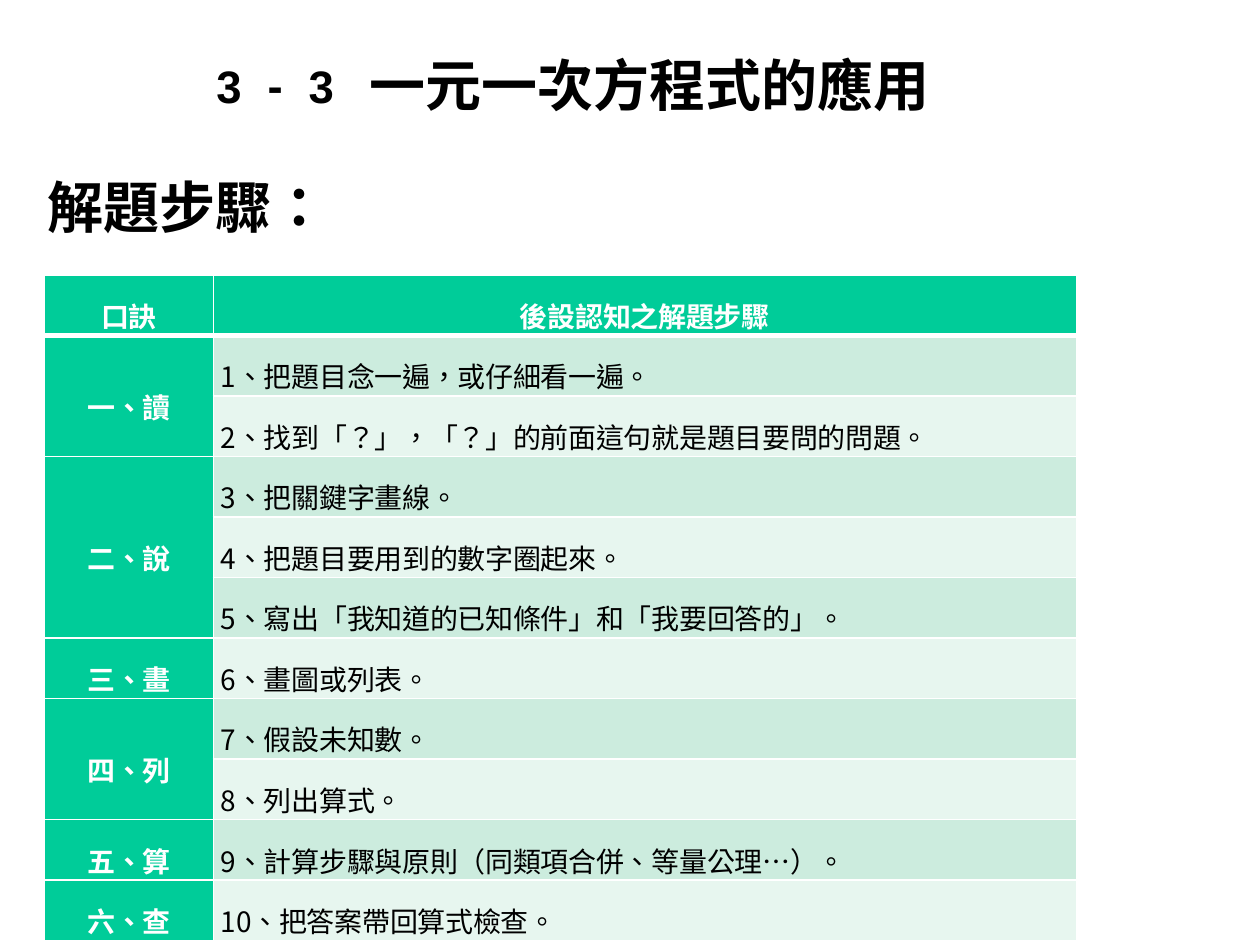
from typing import NamedTuple

import lxml.etree
import pptx
import pptx.dml.color
import pptx.enum.lang
import pptx.enum.text
import pptx.oxml.ns
import pptx.util

Cm = pptx.util.Cm
Pt = pptx.util.Pt
Align = pptx.enum.text.PP_ALIGN
Anchor = pptx.enum.text.MSO_ANCHOR
RGBColor = pptx.dml.color.RGBColor
qn = pptx.oxml.ns.qn

BLACK = RGBColor(0x00, 0x00, 0x00)
WHITE = RGBColor(0xFF, 0xFF, 0xFF)
GREEN = RGBColor(0x00, 0xCC, 0x99)
BANDS = (RGBColor(0xCC, 0xEC, 0xDE), RGBColor(0xE7, 0xF6, 0xEF))
CJK = "Noto Sans CJK SC"


class Style(NamedTuple):
    size: float
    color: RGBColor = BLACK
    bold: bool = True
    font: str = CJK
    align: Align = Align.LEFT
    line_spacing: float = 1.0
    tracking: int = 0  # hundredths of a point


class Label(NamedTuple):
    text: str
    left: float
    top: float
    width: float
    height: float
    style: Style
    anchor: Anchor = Anchor.TOP


class Stage(NamedTuple):
    keyword: str
    steps: tuple[str, ...]


HEADING = Style(32)
NUMBER = Style(26, font="Arial", align=Align.CENTER)
KEYWORD = Style(16, WHITE, align=Align.CENTER, line_spacing=1.5)
STEP = Style(16, bold=False, align=Align.JUSTIFY, line_spacing=1.5, tracking=-10)

LABELS = (
    Label("一元一次方程式的應用", 7.19, 0.84, 16.3, 1.7, HEADING, Anchor.MIDDLE),
    Label("3", 4.11, 1.04, 1.02, 1.35, NUMBER),
    Label("3", 5.97, 1.04, 1.02, 1.35, NUMBER),
    Label("-", 4.8, 1.02, 1.5, 1.35, NUMBER),
)
STAGES = (
    Stage("一、讀", ("把題目念一遍，或仔細看一遍。",
                  "找到「？」，「？」的前面這句就是題目要問的問題。")),
    Stage("二、說", ("把關鍵字畫線。", "把題目要用到的數字圈起來。",
                  "寫出「我知道的已知條件」和「我要回答的」。")),
    Stage("三、畫", ("畫圖或列表。",)),
    Stage("四、列", ("假設未知數。", "列出算式。")),
    Stage("五、算", ("計算步驟與原則（同類項合併、等量公理…）。",)),
    Stage("六、查", ("把答案帶回算式檢查。",)),
)


def write(frame, text: str, style: Style) -> None:
    frame.text = text
    paragraph = frame.paragraphs[0]
    paragraph.alignment = style.align
    paragraph.line_spacing = style.line_spacing
    font = paragraph.font
    font.size = Pt(style.size)
    font.bold = style.bold
    font.color.rgb = style.color
    font.name = style.font
    properties = paragraph._p.pPr.find(qn("a:defRPr"))
    properties.set("spc", str(style.tracking))
    lxml.etree.SubElement(properties, qn("a:ea"), typeface=style.font)
    for run in paragraph.runs:
        run.font.language_id = pptx.enum.lang.MSO_LANGUAGE_ID.TRADITIONAL_CHINESE


def add_label(slide, label: Label) -> None:
    box = slide.shapes.add_textbox(
        Cm(label.left), Cm(label.top), Cm(label.width), Cm(label.height))
    box.text_frame.word_wrap = True
    box.text_frame.vertical_anchor = label.anchor
    write(box.text_frame, label.text, label.style)


def add_borders(cell, top: float, bottom: float) -> None:
    properties = cell._tc.get_or_add_tcPr()
    for side, width in (("L", 1), ("R", 1), ("T", top), ("B", bottom)):
        line = lxml.etree.SubElement(properties, qn(f"a:ln{side}"), w=str(Pt(width)))
        fill = lxml.etree.SubElement(line, qn("a:solidFill"))
        lxml.etree.SubElement(fill, qn("a:srgbClr"), val=str(WHITE))


def format_cell(cell, row: int, fill: RGBColor) -> None:
    cell.margin_left = cell.margin_right = Cm(0.15)
    cell.margin_top = cell.margin_bottom = 0
    cell.vertical_anchor = Anchor.MIDDLE
    add_borders(cell, top=3 if row == 1 else 1, bottom=3 if row == 0 else 1)
    cell.fill.solid()
    cell.fill.fore_color.rgb = fill


def add_steps_table(slide) -> None:
    row_count = 1 + sum(len(stage.steps) for stage in STAGES)
    table = slide.shapes.add_table(
        row_count, 2, Cm(0.9), Cm(5.54), Cm(20.8), Cm(12.57)).table
    table.columns[0].width = Cm(3.4)
    table.columns[1].width = Cm(17.4)
    for row in range(row_count):
        table.rows[row].height = Cm(1.14)
        format_cell(table.cell(row, 0), row, GREEN)
        format_cell(table.cell(row, 1), row, BANDS[(row - 1) % 2] if row else GREEN)

    write(table.cell(0, 0).text_frame, "口訣", KEYWORD)
    write(table.cell(0, 1).text_frame, "後設認知之解題步驟",
          KEYWORD._replace(tracking=-10))
    row = 1
    for stage in STAGES:
        keyword = table.cell(row, 0)
        if len(stage.steps) > 1:
            keyword.merge(table.cell(row + len(stage.steps) - 1, 0))
        write(keyword.text_frame, stage.keyword, KEYWORD)
        for step in stage.steps:
            write(table.cell(row, 1).text_frame, f"{row}、{step}", STEP)
            row += 1


def main() -> None:
    presentation = pptx.Presentation()
    presentation.slide_width = Cm(25.4)
    presentation.slide_height = Cm(19.05)
    slide = presentation.slides.add_slide(presentation.slide_layouts[5])

    title = slide.shapes.title
    title.left, title.top, title.width, title.height = (
        Cm(0.71), Cm(3.48), Cm(6.4), Cm(2))
    title.text_frame.auto_size = pptx.enum.text.MSO_AUTO_SIZE.NONE
    title.text_frame.vertical_anchor = Anchor.TOP
    title.text_frame.margin_top = 0
    write(title.text_frame, "解題步驟：", HEADING)

    add_steps_table(slide)
    for label in LABELS:
        add_label(slide, label)
    presentation.save("out.pptx")


if __name__ == "__main__":
    main()
